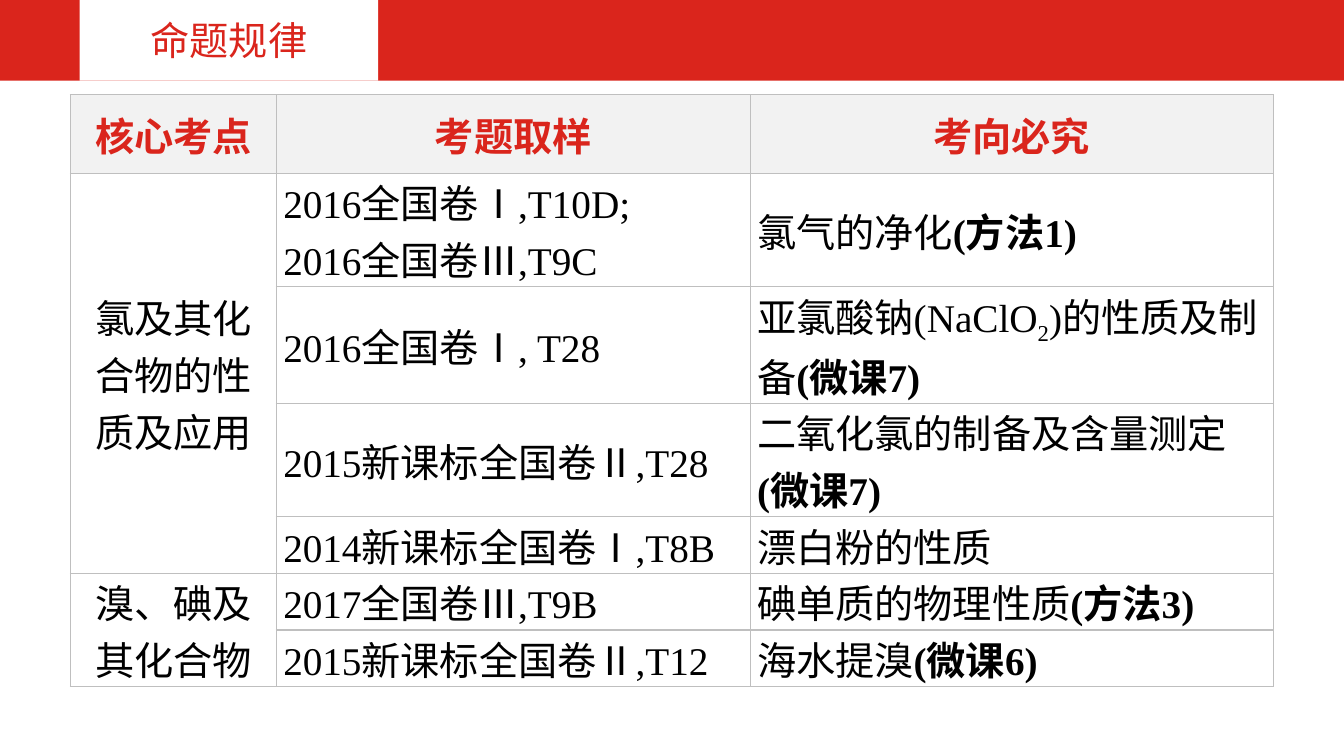
from dataclasses import dataclass

from lxml.etree import SubElement
from pptx import Presentation
from pptx.dml.color import RGBColor
from pptx.enum.shapes import MSO_SHAPE
from pptx.enum.text import MSO_ANCHOR, MSO_AUTO_SIZE, PP_ALIGN
from pptx.oxml.ns import qn
from pptx.table import _Cell
from pptx.text.text import _Paragraph
from pptx.util import Emu, Pt

RED = RGBColor(0xDA, 0x25, 0x1C)
WHITE = RGBColor(0xFF, 0xFF, 0xFF)
BLACK = RGBColor(0x00, 0x00, 0x00)
HEADER_GREY = RGBColor(0xF2, 0xF2, 0xF2)
BORDER_GREY = RGBColor(0xBF, 0xBF, 0xBF)
LATIN_FONT = "Times New Roman"
CJK_FONT = "Noto Sans CJK SC"

SLIDE_W, SLIDE_H, BAND_H = 1333, 750, 80
COL_WIDTHS = (204, 470, 519)
HEADER_H, LINE_H = 78, 52


def px(n: int) -> Emu:
    """Convert px (100 to the inch) to EMU."""
    return Emu(n * 9144)


@dataclass
class Run:
    text: str
    bold: bool = False
    subscript: bool = False


@dataclass
class ExamRow:
    samples: tuple[str, ...]
    focus: tuple[Run, ...]
    lines: int = 1


@dataclass
class Topic:
    name: str
    rows: tuple[ExamRow, ...]


HEADERS = ("核心考点", "考题取样", "考向必究")
TOPICS = (
    Topic("氯及其化合物的性质及应用", (
        ExamRow(("2016全国卷Ⅰ,T10D;", "2016全国卷Ⅲ,T9C"),
                (Run("氯气的净化"), Run("(方法1)", bold=True)), 2),
        ExamRow(("2016全国卷Ⅰ, T28",),
                (Run("亚氯酸钠(NaClO"), Run("2", subscript=True),
                 Run(")的性质及制备"), Run("(微课7)", bold=True)), 2),
        ExamRow(("2015新课标全国卷Ⅱ,T28",),
                (Run("二氧化氯的制备及含量测定"), Run("(微课7)", bold=True)), 2),
        ExamRow(("2014新课标全国卷Ⅰ,T8B",), (Run("漂白粉的性质"),)),
    )),
    Topic("溴、碘及其化合物", (
        ExamRow(("2017全国卷Ⅲ,T9B",),
                (Run("碘单质的物理性质"), Run("(方法3)", bold=True))),
        ExamRow(("2015新课标全国卷Ⅱ,T12",),
                (Run("海水提溴"), Run("(微课6)", bold=True))),
    )),
)


def write_paragraph(p: _Paragraph, runs: tuple[Run, ...], color: RGBColor,
                    align: PP_ALIGN) -> None:
    p.alignment = align
    p.font.size = Pt(28)
    p.font.name = LATIN_FONT
    p.font.color.rgb = color
    def_rpr = p._p.pPr.find(qn("a:defRPr"))
    SubElement(def_rpr, qn("a:ea")).set("typeface", CJK_FONT)
    for run in runs:
        r = p.add_run()
        r.text = run.text
        r.font.bold = run.bold
        if run.subscript:
            r.font._element.set("baseline", "-25000")


def add_borders(cell: _Cell) -> None:
    tc_pr = cell._tc.get_or_add_tcPr()
    for i, side in enumerate(("lnL", "lnR", "lnT", "lnB")):
        ln = tc_pr.makeelement(qn(f"a:{side}"), {"w": str(Pt(1))})
        fill = SubElement(ln, qn("a:solidFill"))
        SubElement(fill, qn("a:srgbClr")).set("val", str(BORDER_GREY))
        tc_pr.insert(i, ln)


def write_cell(cell: _Cell, paragraphs: tuple[tuple[Run, ...], ...],
               align: PP_ALIGN = PP_ALIGN.LEFT, header: bool = False) -> None:
    cell.vertical_anchor = MSO_ANCHOR.MIDDLE
    cell.margin_left = cell.margin_right = px(16 if header else 7)
    cell.margin_top = cell.margin_bottom = px(8 if header else 0)
    tf = cell.text_frame
    for i, runs in enumerate(paragraphs):
        p = tf.add_paragraph() if i else tf.paragraphs[0]
        write_paragraph(p, runs, RED if header else BLACK, align)


def main() -> None:
    prs = Presentation()
    prs.slide_width, prs.slide_height = px(SLIDE_W), px(SLIDE_H)
    s = prs.slides.add_slide(prs.slide_layouts[5])

    # Red band, behind the title
    band = s.shapes.add_shape(MSO_SHAPE.RECTANGLE, 0, 0, px(SLIDE_W), px(BAND_H))
    band.shadow.inherit = False
    band.fill.solid()
    band.fill.fore_color.rgb = RED
    band.line.fill.background()
    s.shapes._spTree.insert(2, band._element)

    # Title on a white tab
    title = s.shapes.title
    title.left, title.top, title.width, title.height = px(79), 0, px(296), px(BAND_H)
    title.fill.solid()
    title.fill.fore_color.rgb = WHITE
    tf = title.text_frame
    tf.auto_size = MSO_AUTO_SIZE.NONE
    tf.vertical_anchor = MSO_ANCHOR.MIDDLE
    write_paragraph(tf.paragraphs[0], (Run("命题规律"),), RED, PP_ALIGN.CENTER)

    # Table grid
    exam_rows = [row for topic in TOPICS for row in topic.rows]
    heights = [HEADER_H] + [row.lines * LINE_H for row in exam_rows]
    table = s.shapes.add_table(len(heights), len(COL_WIDTHS), px(70), px(94),
                               px(sum(COL_WIDTHS)), px(sum(heights))).table
    table.first_row = table.horz_banding = False
    for column, width in zip(table.columns, COL_WIDTHS):
        column.width = px(width)
    for row, height in zip(table.rows, heights):
        row.height = px(height)
    for i, cell in enumerate(table.iter_cells()):
        if i < len(HEADERS):
            cell.fill.solid()
            cell.fill.fore_color.rgb = HEADER_GREY
        else:
            cell.fill.background()
        add_borders(cell)

    # Table text
    for col, header in enumerate(HEADERS):
        write_cell(table.cell(0, col), ((Run(header, bold=True),),),
                   PP_ALIGN.CENTER, header=True)
    top = 1
    for topic in TOPICS:
        name_cell = table.cell(top, 0)
        name_cell.merge(table.cell(top + len(topic.rows) - 1, 0))
        write_cell(name_cell, ((Run(topic.name),),), PP_ALIGN.CENTER)
        for i, row in enumerate(topic.rows, top):
            write_cell(table.cell(i, 1), tuple((Run(t),) for t in row.samples))
            write_cell(table.cell(i, 2), (row.focus,))
        top += len(topic.rows)

    prs.save("out.pptx")


if __name__ == "__main__":
    main()
